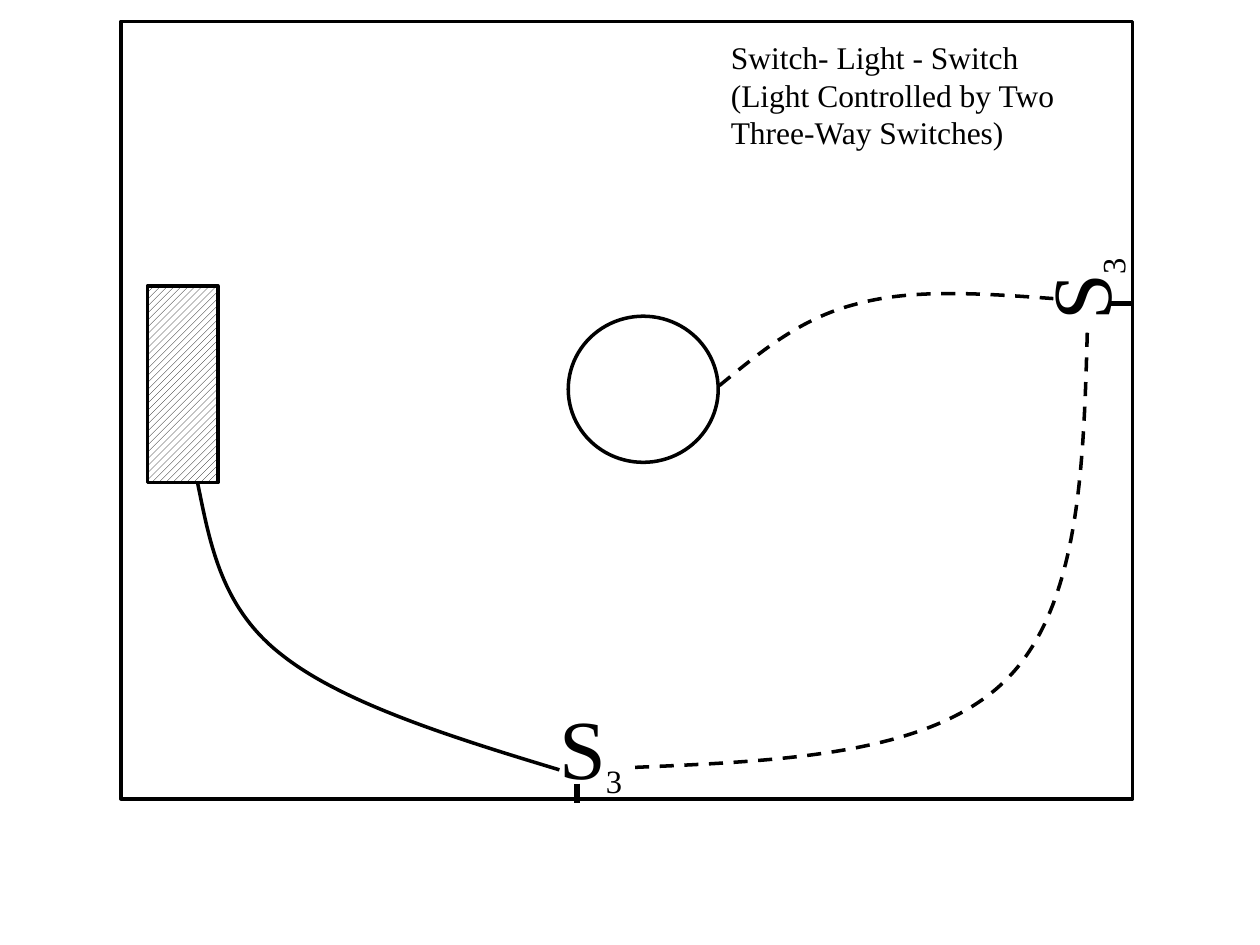
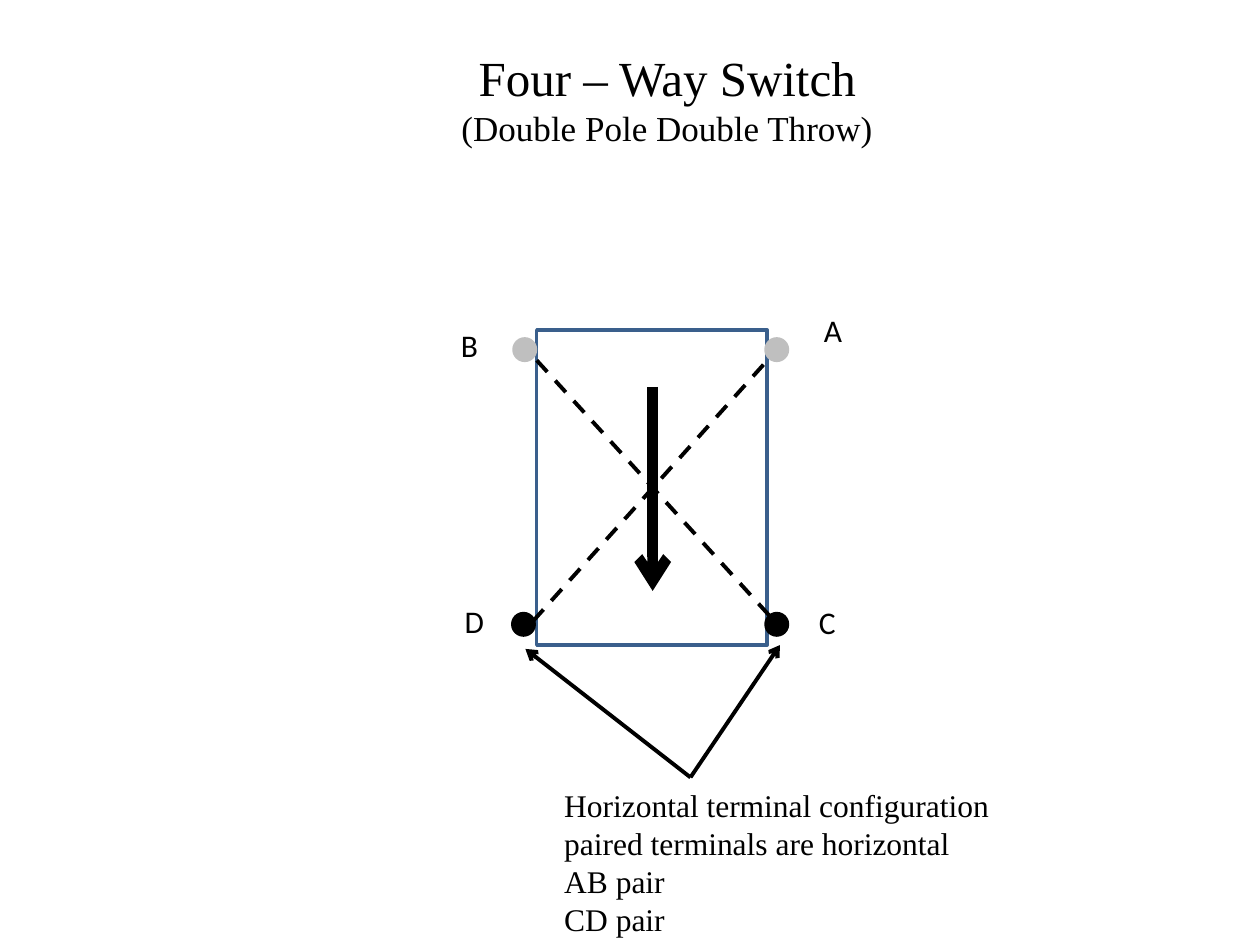
from lxml import etree
from pptx import Presentation
from pptx.dml.color import RGBColor
from pptx.enum import dml, shapes, text
from pptx.oxml import ns
from pptx.util import Inches, Pt

COLORS = {"ink": "000000", "paper": "FFFFFF", "body": "3A5F8C", "gray": "BFBFBF"}
SERIF, SANS = "Times New Roman", "Calibri"
RECT, OVAL = shapes.MSO_SHAPE.RECTANGLE, shapes.MSO_SHAPE.OVAL


def rgb(name):
    return RGBColor.from_string(COLORS[name])


def box(lengths):
    return [Inches(v) for v in lengths]


class Diagram:
    """Draws wiring symbols on the current slide in one shared style."""

    def __init__(self, prs):
        self.prs = prs
        self.s = None

    def new_slide(self):
        self.s = self.prs.slides.add_slide(self.prs.slide_layouts[5])

    def _write(self, tf, lines, sizes, font, align):
        tf.word_wrap = True
        tf.auto_size = text.MSO_AUTO_SIZE.NONE
        tf.vertical_anchor = text.MSO_ANCHOR.TOP
        for i, line in enumerate(lines):
            p = tf.add_paragraph() if i else tf.paragraphs[0]
            p.text = line
            p.alignment = align
            p.font.name = font
            p.font.size = Pt(sizes[min(i, len(sizes) - 1)])
            p.font.color.rgb = rgb("ink")

    def title(self, at, lines, sizes, align=text.PP_ALIGN.LEFT):
        sp = self.s.shapes.title
        sp.left, sp.top, sp.width, sp.height = box(at)
        self._write(sp.text_frame, lines, sizes, SERIF, align)

    def label(self, at, lines, size=18, font=SERIF):
        sp = self.s.shapes.add_textbox(*box(at))
        self._write(sp.text_frame, lines, [size], font, text.PP_ALIGN.LEFT)
        return sp

    def three_way_switch(self, at, rotation=0):
        """Writes the S symbol with its subscript 3."""
        sp = self.label(at, ["S"], 48)
        sp.rotation = rotation
        r = sp.text_frame.paragraphs[0].add_run()
        r.text = "3"
        r.font.size = Pt(32)
        r._r.get_or_add_rPr().set("baseline", "-25000")

    def _stroke(self, sp, color, width, dashed=False):
        sp.line.color.rgb = rgb(color)
        sp.line.width = Pt(width)
        if dashed:
            sp.line.dash_style = dml.MSO_LINE.DASH

    def outline(self, kind, at, line="ink", fill=None):
        sp = self.s.shapes.add_shape(kind, *box(at))
        sp.shadow.inherit = False
        self._stroke(sp, line, 2)
        if fill:
            sp.fill.solid()
            sp.fill.fore_color.rgb = rgb(fill)
        else:
            sp.fill.background()
        return sp

    def panel(self, at):
        """Draws the hatched service panel."""
        fill = self.outline(RECT, at).fill
        fill.patterned()
        fill.pattern = dml.MSO_PATTERN.WIDE_UPWARD_DIAGONAL
        fill.fore_color.rgb = rgb("ink")
        fill.back_color.rgb = rgb("paper")

    def line(self, start, end, width, dashed=False, arrow=False):
        c = self.s.shapes.add_connector(shapes.MSO_CONNECTOR.STRAIGHT,
                                        *box(start + end))
        self._stroke(c, "ink", width, dashed)
        if arrow:
            etree.SubElement(c.line._get_or_add_ln(), ns.qn("a:tailEnd"), type="arrow")
        etree.SubElement(c._element.spPr, ns.qn("a:effectLst"))

    def cable(self, points, dashed=False):
        """Draws Bezier curves: a start, then three points for each curve."""
        start, *rest = [box(p) for p in points]
        builder = self.s.shapes.build_freeform(*start)
        builder.add_line_segments(rest, close=False)
        sp = builder.convert_to_shape()
        sp.shadow.inherit = False
        sp.fill.background()
        self._stroke(sp, "ink", 2, dashed)
        segments = list(sp._element.iter(ns.qn("a:lnTo")))
        for i in range(0, len(segments), 3):
            curve = etree.SubElement(segments[i].getparent(), ns.qn("a:cubicBezTo"))
            for segment in segments[i:i + 3]:
                curve.append(segment[0])
                segment.getparent().remove(segment)


def switch_light_switch(d):
    d.new_slide()
    d.title((5.7, 0.25, 3.17, 1.01),
            ["Switch- Light - Switch", "(Light Controlled by Two Three-Way Switches)"],
            [18])
    d.outline(OVAL, (4.51, 2.51, 1.19, 1.16))
    d.three_way_switch((4.34, 5.47, 0.77, 0.74))
    d.three_way_switch((8.11, 1.89, 0.75, 0.76), 270)
    d.line((4.58, 6.22), (4.58, 6.37), 3)
    d.line((8.81, 2.41), (8.99, 2.41), 3)
    d.panel((1.17, 2.27, 0.56, 1.56))
    d.outline(RECT, (0.96, 0.17, 8.03, 6.17))
    d.cable([(5.71, 3.06), (6.04, 2.79), (6.36, 2.52), (6.81, 2.41),
             (7.25, 2.29), (7.8, 2.33), (8.36, 2.37)], dashed=True)
    d.cable([(1.57, 3.84), (1.67, 4.33), (1.76, 4.83), (2.24, 5.2),
             (2.72, 5.58), (3.58, 5.85), (4.44, 6.11)])
    d.cable([(5.04, 6.09), (6.21, 6.04), (7.37, 5.99), (7.97, 5.41),
             (8.57, 4.83), (8.6, 3.71), (8.63, 2.6)], dashed=True)


def four_way_switch(d):
    d.new_slide()
    d.title((1.17, 0.33, 8.25, 0.91),
            ["Four – Way Switch", "(Double Pole Double Throw)"],
            [28, 20], text.PP_ALIGN.CENTER)
    d.outline(RECT, (4.26, 2.62, 1.83, 2.5), "body")
    d.line((4.26, 2.86), (6.11, 4.89), 2.25, dashed=True)
    d.line((4.23, 4.93), (6.18, 2.76), 2.25, dashed=True)
    d.line((5.18, 3.07), (5.18, 4.69), 6, arrow=True)

    terminals = [("A", (6.44, 2.42), (6.08, 2.69), "gray"),
                 ("B", (3.56, 2.54), (4.08, 2.69), "gray"),
                 ("C", (6.4, 4.74), (6.08, 4.87), "ink"),
                 ("D", (3.59, 4.73), (4.07, 4.87), "ink")]
    for name, label_at, dot_at, color in terminals:
        d.label(label_at + (0.66, 0.41), [name], font=SANS)
        d.outline(OVAL, dot_at + (0.17, 0.17), color, color)

    d.label((4.38, 6.19, 3.73, 1.31),
            ["Horizontal terminal configuration paired terminals are horizontal",
             "AB pair", "CD pair"])
    for tip in [(4.17, 5.15), (6.19, 5.12)]:
        d.line((5.48, 6.17), tip, 2.25, arrow=True)


def main():
    prs = Presentation()
    prs.slide_width, prs.slide_height = Inches(10), Inches(7.5)
    d = Diagram(prs)
    switch_light_switch(d)
    four_way_switch(d)
    prs.save("out.pptx")


if __name__ == "__main__":
    main()
